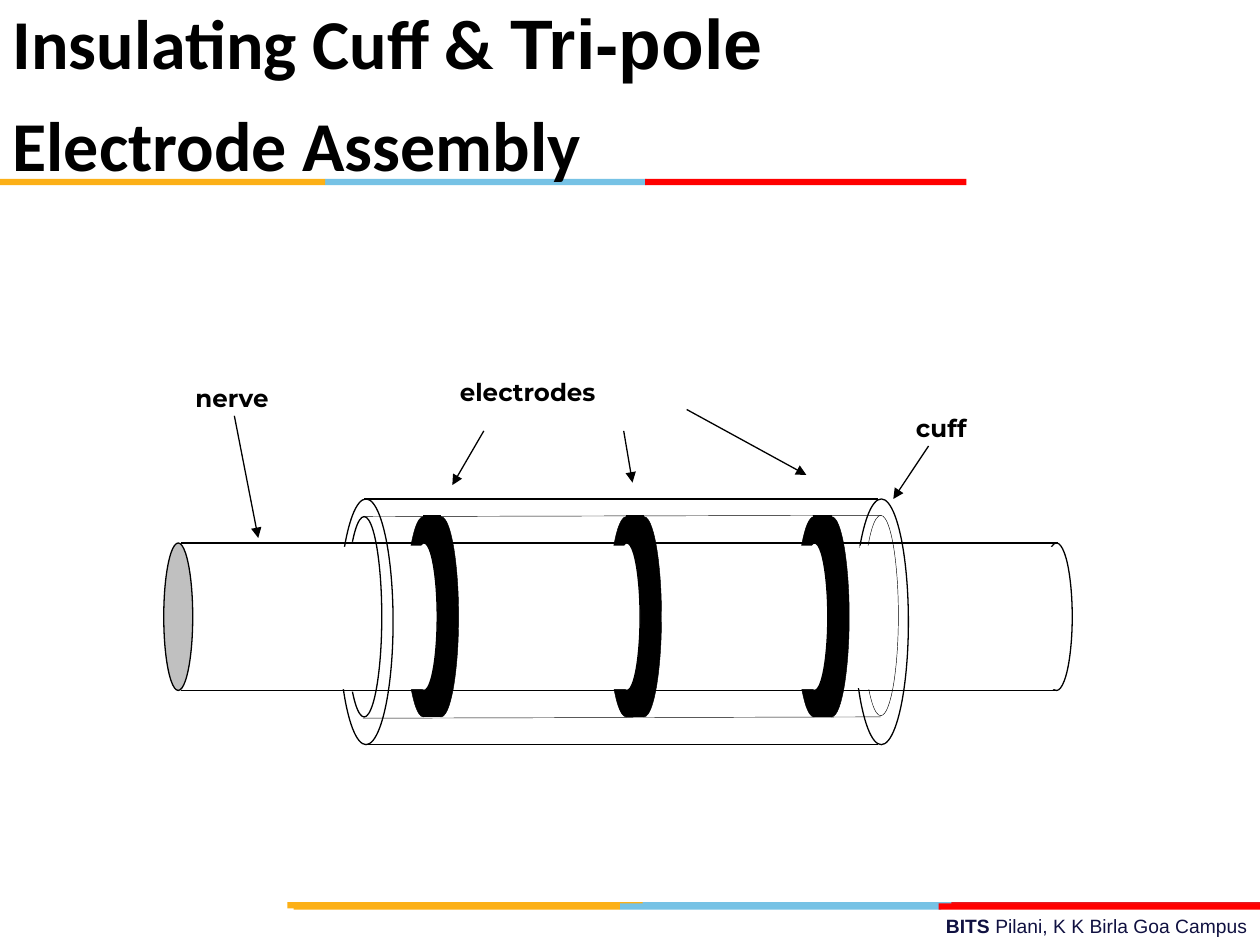
import pptx
import pptx.util
from pptx.dml.color import RGBColor
from pptx.enum.shapes import MSO_CONNECTOR, MSO_SHAPE
from pptx.enum.text import MSO_ANCHOR, PP_ALIGN
from pptx.oxml.ns import qn
from pptx.util import Inches
from lxml import etree

BLACK = RGBColor(0x00, 0x00, 0x00)
WHITE = RGBColor(0xFF, 0xFF, 0xFF)
GREY = RGBColor(0xC0, 0xC0, 0xC0)
NAVY = RGBColor(0x10, 0x11, 0x41)
BLUE = RGBColor(0x76, 0xC2, 0xE5)
YELLOW = RGBColor(0xFC, 0xB0, 0x17)
RED = RGBColor(0xFF, 0x00, 0x00)
DARK_RED = RGBColor(0xE3, 0x1C, 0x24)

THIN, FINE, NORMAL = 0.25, 0.5, 0.75
OVAL, RECT = MSO_SHAPE.OVAL, MSO_SHAPE.RECTANGLE


class SlideBuilder:
    def __init__(self, slide):
        self.shapes = slide.shapes

    def shape(self, kind, left, top, width, height, fill=WHITE, line=None):
        """Add a filled shape; line is the outline width in points."""
        shape = self.shapes.add_shape(
            kind, Inches(left), Inches(top), Inches(width), Inches(height))
        shape.shadow.inherit = False
        shape.fill.solid()
        shape.fill.fore_color.rgb = fill
        if line is None:
            shape.line.fill.background()
        else:
            shape.line.color.rgb = BLACK
            shape.line.width = pptx.util.Pt(line)
        return shape

    def line(self, x1, y1, x2, y2, width=NORMAL, arrow=False):
        line = self.shapes.add_connector(
            MSO_CONNECTOR.STRAIGHT, Inches(x1), Inches(y1), Inches(x2), Inches(y2))
        line.line.color.rgb = BLACK
        line.line.width = pptx.util.Pt(width)
        if arrow:
            etree.SubElement(line.line._get_or_add_ln(), qn("a:tailEnd"), type="triangle")
        etree.SubElement(line._element.spPr, qn("a:effectLst"))

    def arrow(self, x1, y1, x2, y2):
        self.line(x1, y1, x2, y2, arrow=True)

    def text_box(self, left, top, width, height):
        return self.shapes.add_textbox(
            Inches(left), Inches(top), Inches(width), Inches(height))

    def frame(self, box, side, top, bottom):
        """Set wrapping and insets, and return the text frame."""
        frame = box.text_frame
        frame.word_wrap = True
        frame.vertical_anchor = MSO_ANCHOR.TOP
        frame.margin_left = frame.margin_right = Inches(side)
        frame.margin_top, frame.margin_bottom = Inches(top), Inches(bottom)
        return frame

    def span(self, para, text, font, size, color=BLACK, bold=True):
        span = para.add_run()
        span.text = text
        span.font.name = font
        span.font.size = pptx.util.Pt(size)
        span.font.bold = bold
        span.font.color.rgb = color

    def bars(self, top, *bars):
        for left, width, color in bars:
            self.shape(RECT, left, top, width, 0.05, color)

    def label(self, text, left, top, width, height, inset_top=0.04):
        box = self.shape(RECT, left, top, width, height)
        para = self.frame(box, 0.08, inset_top, 0.04).paragraphs[0]
        para.alignment = PP_ALIGN.LEFT
        self.span(para, text, "Montserrat", 14)

    def electrode(self, left):
        """Draw a black ring band with the nerve passing through it."""
        for offset in (0.14, 0):
            self.shape(OVAL, left + offset, 4.1, 0.28, 1.59, BLACK, THIN)
        self.shape(RECT, left + 0.14, 4.09, 0.14, 1.6, BLACK, FINE)
        self.shape(OVAL, left + 0.04, 4.31, 0.21, 1.17, WHITE, NORMAL)
        self.shape(RECT, left - 0.01, 4.33, 0.15, 1.14)


def add_footer_and_bars(page):
    box = page.text_box(3.58, 7.21, 6.42, 0.29)
    para = page.frame(box, 0.1, 0.05, 0.05).paragraphs[0]
    para.alignment = PP_ALIGN.RIGHT
    page.span(para, "BITS ", "Arial", 11, NAVY)
    page.span(para, "Pilani, K K Birla Goa Campus", "Arial", 11, NAVY, bold=False)
    page.bars(7.16, (5.06, 2.55, BLUE), (7.55, 2.45, DARK_RED), (2.28, 2.82, YELLOW))
    page.bars(7.17, (4.92, 2.55, BLUE), (2.33, 2.59, YELLOW), (7.45, 2.55, RED))
    page.bars(1.42, (2.58, 2.55, BLUE), (0, 2.58, YELLOW), (5.12, 2.55, RED))


def add_nerve_and_cuff(page):
    # Nerve ends
    page.shape(OVAL, 1.3, 4.31, 0.23, 1.17, GREY, NORMAL)
    page.shape(OVAL, 8.26, 4.31, 0.25, 1.17, WHITE, NORMAL)
    page.shape(RECT, 8.14, 4.35, 0.25, 1.11)

    # Outer cuff wall
    for left in (6.78, 2.69):
        page.shape(OVAL, left, 3.96, 0.43, 1.95, WHITE, NORMAL)
    for y in (3.96, 5.91):
        page.line(6.97, y, 2.89, y)
    for left in (2.64, 6.73):
        page.shape(RECT, left, 4.35, 0.16, 1.11)

    # Inner cuff wall
    page.shape(OVAL, 2.75, 4.1, 0.28, 1.59, WHITE, NORMAL)
    page.shape(RECT, 2.75, 4.3, 0.1, 1.19)
    page.shape(RECT, 2.53, 4.54, 0.37, 0.67)
    page.shape(OVAL, 6.85, 4.09, 0.28, 1.59, WHITE, THIN)
    page.shape(RECT, 6.82, 4.33, 0.16, 1.14)

    # Nerve sides, with the ring parts behind them covered
    for y in (4.31, 5.48):
        page.line(1.44, y, 8.4, y)
    for left, top in ((8.17, 4.34), (8.17, 5.24), (2.59, 4.34), (2.63, 5.24)):
        page.shape(RECT, left, top, 0.23, 0.23)

    for left in (6.32, 3.22, 4.83):
        page.electrode(left)
    for y in (4.1, 5.7):
        page.line(2.88, y, 6.99, y - 0.01, THIN)


def add_labels(page):
    page.label("electrodes", 3.57, 2.71, 1.88, 0.66, inset_top=0.28)
    page.arrow(3.84, 3.42, 3.59, 3.85)
    page.arrow(4.95, 3.42, 5.02, 3.83)
    page.arrow(5.45, 3.25, 6.4, 3.77)
    page.label("nerve", 1.47, 3, 1.09, 0.62)
    page.arrow(1.86, 3.3, 2.05, 4.27)
    page.label("cuff", 7.19, 3, 0.84, 0.86, inset_top=0.28)
    page.arrow(7.37, 3.54, 7.09, 3.96)


def add_title(page):
    frame = page.frame(page.text_box(0.1, 0, 6.21, 1.49), 0, 0, 0)
    para = frame.paragraphs[0]
    page.span(para, "Insulating Cuff & ", "Calibri", 40)
    page.span(para, "Tri-pole", "Arial", 40)
    para = frame.add_paragraph()
    para.space_before = pptx.util.Pt(10)
    page.span(para, "Electrode Assembly", "Calibri", 40)


def main():
    deck = pptx.Presentation()
    deck.slide_width, deck.slide_height = Inches(10), Inches(7.5)
    page = SlideBuilder(deck.slides.add_slide(deck.slide_layouts[6]))
    add_footer_and_bars(page)
    add_nerve_and_cuff(page)
    add_labels(page)
    add_title(page)
    deck.save("out.pptx")


if __name__ == "__main__":
    main()
